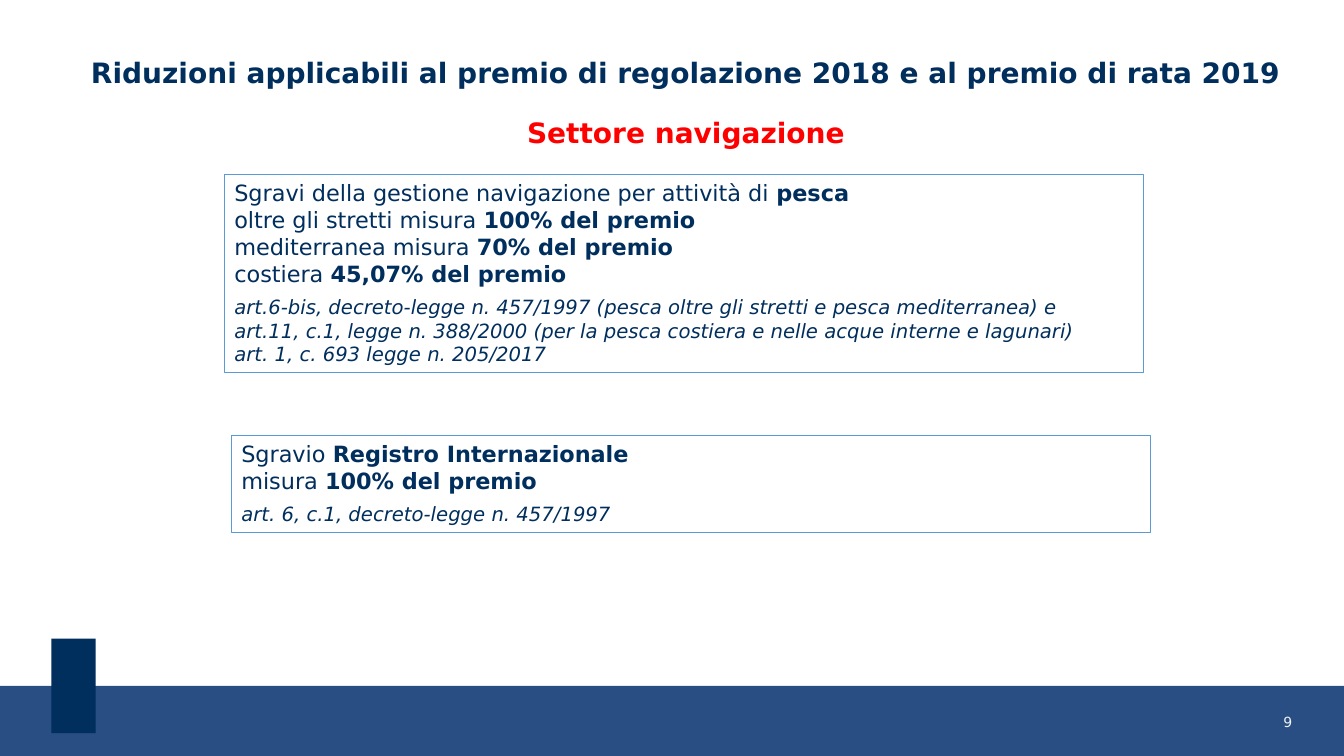
from pptx import Presentation
from pptx.dml.color import RGBColor as Rgb
from pptx.enum.shapes import MSO_SHAPE as Kind
from pptx.enum.text import MSO_ANCHOR as Anchor, MSO_AUTO_SIZE as Fit, PP_ALIGN as Align
from pptx.util import Pt

FONT = "DejaVu Sans"
NAVY, BLUE, EDGE, RED, PALE = "002E5D", "284E83", "5B9BD5", "FF0000", "F2F2F2"


def tint(code):
    return Rgb.from_string(code)


def add_bar(slide, place, color):
    """Plain filled block."""
    bar = slide.shapes.add_shape(Kind.RECTANGLE, *map(Pt, place))
    bar.shadow.inherit = False
    bar.fill.solid()
    bar.fill.fore_color.rgb = tint(color)
    bar.line.fill.background()


def add_run(para, text, size, color=NAVY, bold=False, slant=False):
    run = para.add_run()
    run.text = text
    font = run.font
    font.name, font.size = FONT, Pt(size)
    font.bold, font.italic = bold, slant
    font.color.rgb = tint(color)


def next_para(frame, index, align):
    para = frame.add_paragraph() if index else frame.paragraphs[0]
    para.alignment = align
    return para


def add_text(slide, place, insets, lines, size, align, bold=False, gap=0, pitch=1.0):
    """Text box; each line is a (text, color) pair."""
    frame = slide.shapes.add_textbox(*map(Pt, place)).text_frame
    frame.word_wrap = True
    frame.margin_left, frame.margin_top, frame.margin_right, frame.margin_bottom = map(Pt, insets)
    for index, (text, color) in enumerate(lines):
        para = next_para(frame, index, align)
        para.line_spacing = pitch
        if index:
            para.space_before = Pt(gap)
        add_run(para, text, size, color, bold)


def add_panel(slide, place, facts, laws):
    """Outlined box: (plain, bold) facts, then the laws in italics."""
    panel = slide.shapes.add_shape(Kind.RECTANGLE, *map(Pt, place))
    panel.shadow.inherit = False
    panel.fill.background()
    panel.line.color.rgb = tint(EDGE)
    panel.line.width = Pt(0.75)
    frame = panel.text_frame
    frame.word_wrap = True
    frame.auto_size = Fit.SHAPE_TO_FIT_TEXT
    frame.vertical_anchor = Anchor.TOP
    for index, (plain, strong) in enumerate(facts):
        para = next_para(frame, index, Align.LEFT)
        add_run(para, plain, 16)
        add_run(para, strong, 16, bold=True)
    para.space_after = Pt(6)
    for law in laws:
        add_run(next_para(frame, 1, Align.LEFT), law, 14, slant=True)


def main():
    deck = Presentation()
    deck.slide_width, deck.slide_height = Pt(960), Pt(540)
    slide = deck.slides.add_slide(deck.slide_layouts[6])

    # Footer
    add_bar(slide, (0, 490, 960, 50), BLUE)
    add_bar(slide, (36.7, 456.2, 31.7, 67.5), NAVY)
    add_text(slide, (808.6, 509.8, 114.4, 28.8), (0, 0, 0, 0), [("9", PALE)], 10, Align.RIGHT)

    # Heading
    heading = [
        ("Riduzioni applicabili al premio di regolazione 2018 e al premio di rata 2019", NAVY),
        ("Settore navigazione", RED),
    ]
    add_text(slide, (43.9, 35.3, 887.8, 79.2), (11.5, 7.2, 7.2, 7.2), heading, 20,
             Align.CENTER, bold=True, gap=21.5, pitch=0.9)

    # Reliefs
    add_panel(slide, (160.3, 124.6, 656.6, 141.6), [
        ("Sgravi della gestione navigazione per attività di ", "pesca"),
        ("oltre gli stretti misura ", "100% del premio"),
        ("mediterranea misura ", "70% del premio"),
        ("costiera ", "45,07% del premio"),
    ], [
        "art.6-bis, decreto-legge n. 457/1997 (pesca oltre gli stretti e pesca mediterranea) e",
        "art.11, c.1, legge n. 388/2000 (per la pesca costiera e nelle acque interne e lagunari)",
        "art. 1, c. 693 legge n. 205/2017",
    ])
    add_panel(slide, (165.3, 310.9, 656.6, 69.4), [
        ("Sgravio ", "Registro Internazionale"),
        ("misura ", "100% del premio"),
    ], ["art. 6, c.1, decreto-legge n. 457/1997"])

    deck.save("out.pptx")


if __name__ == "__main__":
    main()
